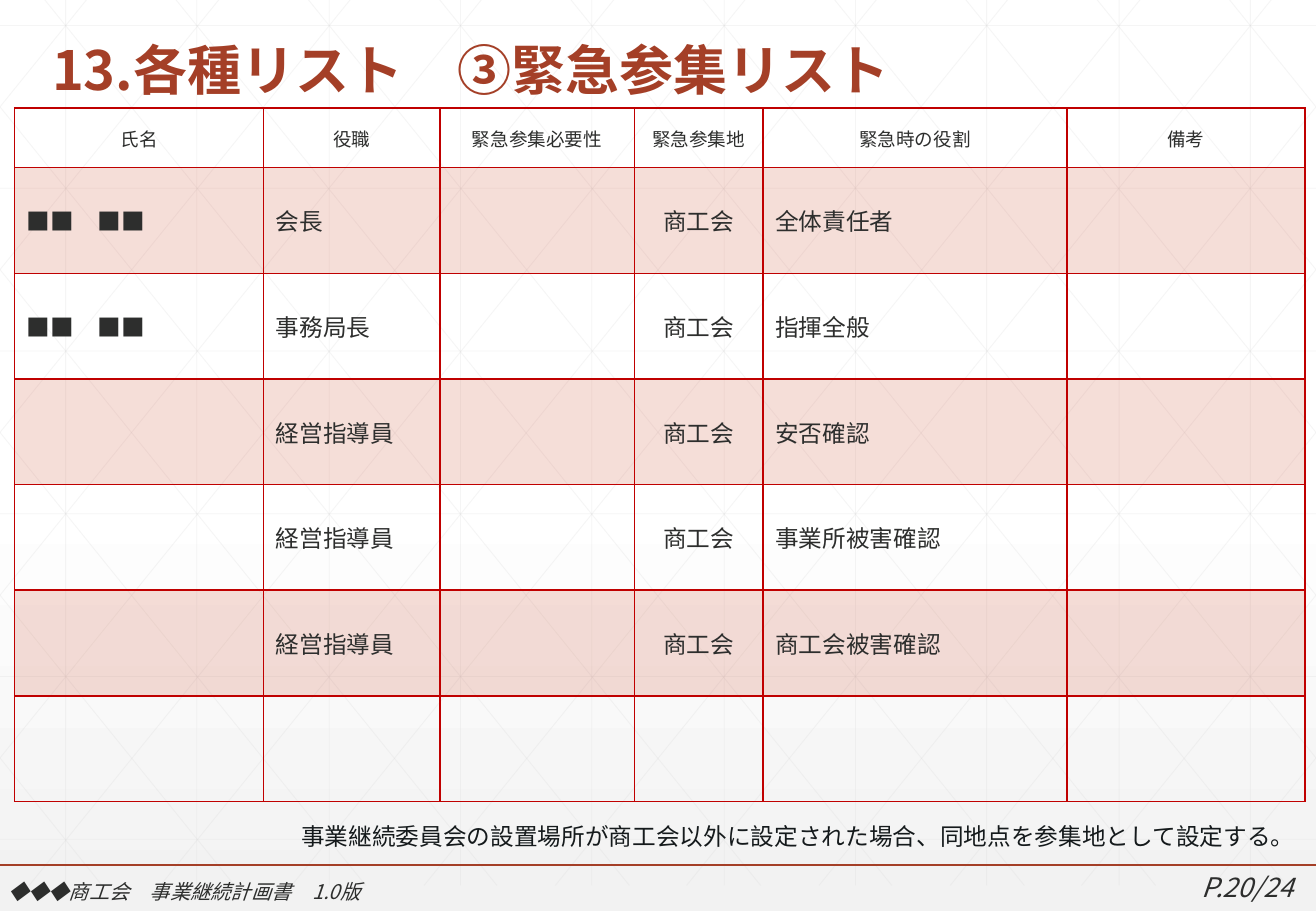
from lxml.etree import SubElement
from pptx import Presentation
from pptx.dml.color import RGBColor
from pptx.enum.shapes import MSO_CONNECTOR
from pptx.enum.text import MSO_ANCHOR, PP_ALIGN
from pptx.oxml.ns import qn
from pptx.util import Pt

EMU_PER_PX = 9144
WIDTH, HEIGHT = 1083, 750
FONT = "Noto Sans CJK JP"
RUST, INK, BORDER, BAND, GRID = "A43F27", "2D2E2D", "C00000", "D15A3E", "D9D9D9"

GRID_TOP, GRID_BOTTOM = -21, 729
GRID_RUN = 606
GRID_STEP = WIDTH / 10

COLUMN_WIDTHS = [205, 145, 160, 106, 250, 196]
HEADER_HEIGHT, ROW_HEIGHT = 49, 87
CENTERED_COLUMN = 3
ROWS = [
    ["氏名", "役職", "緊急参集必要性", "緊急参集地", "緊急時の役割", "備考"],
    ["■■　■■", "会長", "", "商工会", "全体責任者", ""],
    ["■■　■■", "事務局長", "", "商工会", "指揮全般", ""],
    ["", "経営指導員", "", "商工会", "安否確認", ""],
    ["", "経営指導員", "", "商工会", "事業所被害確認", ""],
    ["", "経営指導員", "", "商工会", "商工会被害確認", ""],
    ["", "", "", "", "", ""],
]


def px(length):
    return round(length) * EMU_PER_PX


def color(value):
    return RGBColor.from_string(value)


def set_alpha(properties, percent):
    rgb = properties.find(qn("a:solidFill")).find(qn("a:srgbClr"))
    SubElement(rgb, qn("a:alpha"), val=str(percent * 1000))


def format_text(paragraph, size, ink, align=PP_ALIGN.LEFT, bold=False, italic=False):
    paragraph.alignment = align
    for run in paragraph.runs:
        font = run.font
        font.size, font.bold, font.italic = Pt(size), bold, italic
        font.color.rgb = color(ink)
        font.name = FONT
        SubElement(run._r.get_or_add_rPr(), qn("a:ea"), typeface=FONT)


def add_text(slide, box, text, size, ink, wrap=True, anchor=MSO_ANCHOR.TOP, **style):
    shape = slide.shapes.add_textbox(*map(px, box))
    text_frame = shape.text_frame
    text_frame.word_wrap = wrap
    text_frame.vertical_anchor = anchor
    text_frame.text = text
    paragraph = text_frame.paragraphs[0]
    format_text(paragraph, size, ink, **style)
    return paragraph


def add_line(shapes, start, end, ink, width, alpha=None):
    line = shapes.add_connector(MSO_CONNECTOR.STRAIGHT, *map(px, start + end))
    line.line.color.rgb = color(ink)
    line.line.width = Pt(width)
    properties = line._element.spPr
    if alpha is not None:
        set_alpha(properties.find(qn("a:ln")), alpha)
    SubElement(properties, qn("a:effectLst"))


def clipped_diagonal(top_x):
    slope = (GRID_BOTTOM - GRID_TOP) / GRID_RUN
    left, right = max(top_x, 0), min(top_x + GRID_RUN, WIDTH)
    return [(x, GRID_TOP + (x - top_x) * slope) for x in (left, right)]


def add_grid(slide):
    segments = []
    for index in range(10):
        x = GRID_STEP * (index + 0.5)
        segments.append([(x, GRID_TOP), (x, GRID_BOTTOM)])
    for index in range(6):
        y = 21 + 134 * index
        segments.append([(0, y), (WIDTH, y)])
    for index in range(-5, 10):
        diagonal = clipped_diagonal(20 + GRID_STEP * index)
        segments += [diagonal, [(WIDTH - x, y) for x, y in diagonal]]
    group = slide.shapes.add_group_shape()
    for start, end in segments:
        add_line(group.shapes, start, end, GRID, 0.5, 25)


def add_borders(cell):
    properties = cell._tc.get_or_add_tcPr()
    for side in ("lnL", "lnR", "lnT", "lnB"):
        border = SubElement(properties, qn(f"a:{side}"), w=str(Pt(1)))
        fill = SubElement(border, qn("a:solidFill"))
        SubElement(fill, qn("a:srgbClr"), val=BORDER)


def fill_cell(cell, banded):
    if banded:
        cell.fill.solid()
        cell.fill.fore_color.rgb = color(BAND)
        set_alpha(cell._tc.tcPr, 20)
    else:
        cell.fill.background()


def add_roster(slide):
    height = HEADER_HEIGHT + ROW_HEIGHT * (len(ROWS) - 1)
    box = (12, 89, sum(COLUMN_WIDTHS), height)
    frame = slide.shapes.add_table(len(ROWS), len(COLUMN_WIDTHS), *map(px, box))
    table = frame.table
    table.first_row = table.horz_banding = False
    for column, width in zip(table.columns, COLUMN_WIDTHS):
        column.width = px(width)
    for row_index, texts in enumerate(ROWS):
        header = row_index == 0
        table.rows[row_index].height = px(HEADER_HEIGHT if header else ROW_HEIGHT)
        for column_index, text in enumerate(texts):
            cell = table.cell(row_index, column_index)
            add_borders(cell)
            fill_cell(cell, row_index in (1, 3, 5))
            cell.vertical_anchor = MSO_ANCHOR.MIDDLE
            cell.text_frame.text = text
            centered = header or column_index == CENTERED_COLUMN
            align = PP_ALIGN.CENTER if centered else PP_ALIGN.LEFT
            format_text(cell.text_frame.paragraphs[0], 11 if header else 14, INK, align)


def set_background(slide):
    fill = slide.background.fill
    fill.gradient()
    fill.gradient_angle = 270
    for stop, position, value in zip(fill.gradient_stops, (0.53, 1), ("FFFFFF", "F2F2F2")):
        stop.position = position
        stop.color.rgb = color(value)


def main():
    presentation = Presentation()
    presentation.slide_width, presentation.slide_height = px(WIDTH), px(HEIGHT)
    slide = presentation.slides.add_slide(presentation.slide_layouts[6])
    set_background(slide)
    add_grid(slide)
    add_line(slide.shapes, (0, 712), (WIDTH, 712), RUST, 1)
    add_text(slide, (917, 712, 157, 37), "P.20/24", 16, INK,
             align=PP_ALIGN.RIGHT, italic=True)
    add_text(slide, (-3, 719, 527, 30), "◆◆◆商工会　事業継続計画書\t1.0版", 12, INK,
             italic=True)
    title = add_text(slide, (33, 16, 1015, 73), "13.各種リスト　③緊急参集リスト", 32, RUST,
                     anchor=MSO_ANCHOR.BOTTOM, bold=True)
    title.line_spacing = 0.9
    add_roster(slide)
    add_text(slide, (238, 672, 845, 34),
             "事業継続委員会の設置場所が商工会以外に設定された場合、同地点を参集地として設定する。",
             14, "151A1C", wrap=False)
    presentation.save("out.pptx")


if __name__ == "__main__":
    main()
